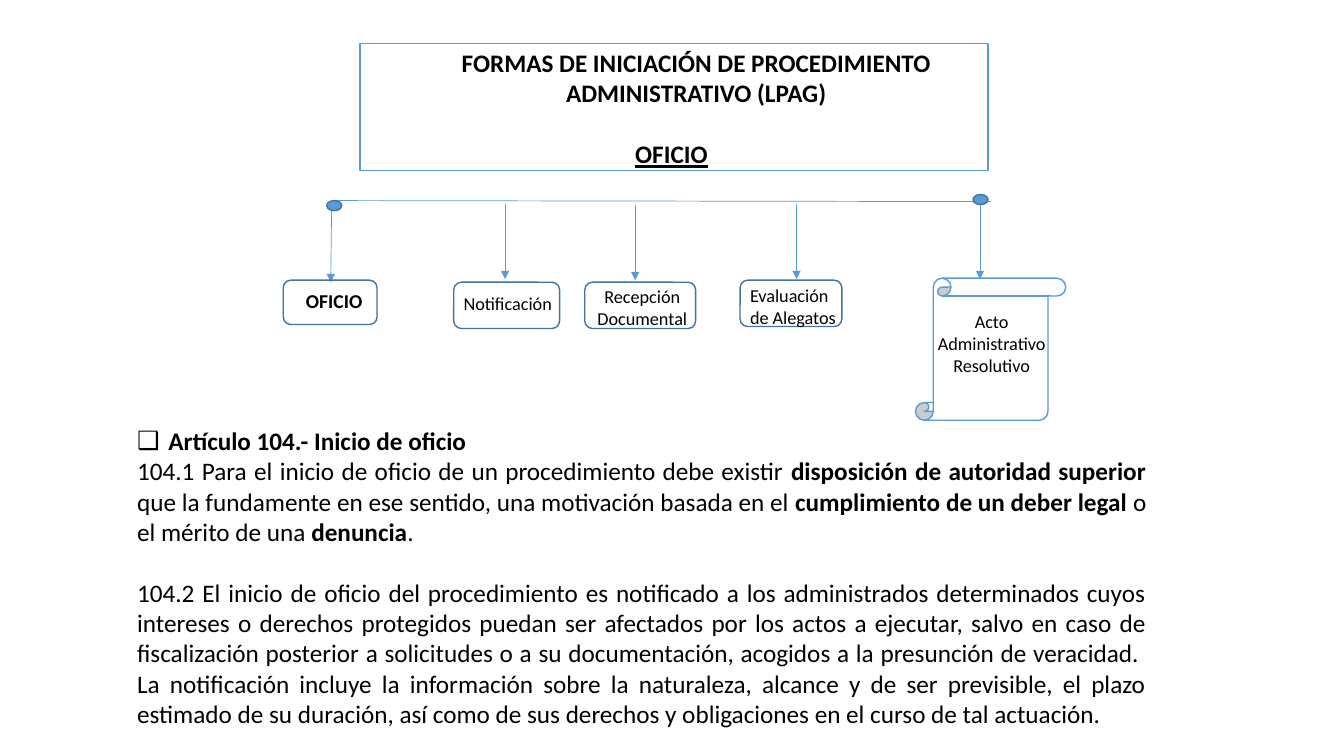
from lxml.etree import SubElement
from pptx import Presentation
from pptx.dml.color import RGBColor
from pptx.enum.shapes import MSO_CONNECTOR as Line, MSO_SHAPE as Kind
from pptx.enum.text import MSO_ANCHOR as Anchor, MSO_AUTO_SIZE as Fit, PP_ALIGN as Align
from pptx.oxml.ns import qn
from pptx.util import Inches, Pt

BLUE = RGBColor(0x5B, 0x9B, 0xD5)
NAVY = RGBColor(0x43, 0x73, 0x9E)
WHITE = RGBColor(255, 255, 255)
BLACK = RGBColor(0, 0, 0)
FONT = "Calibri"
GAP = Pt(22)

# kind, shape box, label box, label, size, bold, alignment
STEPS = [
    (Kind.ROUNDED_RECTANGLE, (2.81, 2.78, 0.93, 0.44), (2.68, 2.82, 1.27, 0.34),
     "OFICIO", 14, True, Align.CENTER),
    (Kind.ROUNDED_RECTANGLE, (4.5, 2.8, 1.05, 0.46), (4.5, 2.85, 2.54, 0.32),
     "Notificación", 13, False, Align.LEFT),
    (Kind.ROUNDED_RECTANGLE, (5.8, 2.8, 1.1, 0.46), (5.81, 2.78, 1.12, 0.76),
     "Recepción Documental", 13, False, Align.CENTER),
    (Kind.ROUNDED_RECTANGLE, (7.34, 2.78, 1.01, 0.46), (7.34, 2.77, 1.09, 0.54),
     "Evaluación de Alegatos", 13, False, Align.LEFT),
    (Kind.VERTICAL_SCROLL, (9.08, 2.76, 1.49, 1.41), (9.14, 3.03, 1.39, 0.76),
     "Acto Administrativo Resolutivo", 13, False, Align.CENTER),
]
ARROWS = [(3.29, 2.03, 3.28, 2.8), (5.01, 2.02, 5.01, 2.77), (6.3, 2.03, 6.3, 2.78),
          (7.9, 2.02, 7.9, 2.77), (9.72, 2.02, 9.72, 2.77)]
DOTS = [(3.24, 1.99, 0.15, 0.1), (9.65, 1.93, 0.15, 0.1)]

HEAD = [("Artículo 104.- Inicio de oficio", True)]
FIRST = [
    ("104.1 Para el inicio de oficio de un procedimiento debe existir ", False),
    ("disposición de autoridad superior", True),
    (" que la fundamente en ese sentido, una motivación basada en el ", False),
    ("cumplimiento de un deber legal", True),
    (" o el mérito de una ", False),
    ("denuncia", True),
    (".", False),
]
SECOND = [(
    "104.2 El inicio de oficio del procedimiento es notificado a los administrados "
    "determinados cuyos intereses o derechos protegidos puedan ser afectados por los "
    "actos a ejecutar, salvo en caso de fiscalización posterior a solicitudes o a su "
    "documentación, acogidos a la presunción de veracidad.  La notificación incluye la "
    "información sobre la naturaleza, alcance y de ser previsible, el plazo estimado de "
    "su duración, así como de sus derechos y obligaciones en el curso de tal actuación.",
    False)]


def inch(vals):
    return [Inches(v) for v in vals]


def add_run(para, text, size, bold=False, under=False):
    run = para.add_run()
    run.text = text
    font = run.font
    font.name, font.size, font.bold = FONT, Pt(size), bold
    font.underline = under
    font.color.rgb = BLACK


def indent(para, left, first=0, mark=None):
    """Set the margins of a paragraph and its bullet, if any."""
    props = para._p.get_or_add_pPr()
    props.set("marL", str(Inches(left)))
    props.set("indent", str(Inches(first)))
    if mark:
        SubElement(props, qn("a:buChar")).set("char", mark)
    else:
        SubElement(props, qn("a:buNone"))


def prepare(shape, box):
    """Move a text holder and return its frame, wrapped and top anchored."""
    shape.left, shape.top, shape.width, shape.height = inch(box)
    frame = shape.text_frame
    frame.word_wrap = True
    frame.auto_size = Fit.NONE
    frame.vertical_anchor = Anchor.TOP
    return frame


def add_shape(slide, kind, box, line, fill=None):
    shape = slide.shapes.add_shape(kind, *inch(box))
    shape.shadow.inherit = False
    if fill is None:
        shape.fill.background()
    else:
        shape.fill.solid()
        shape.fill.fore_color.rgb = fill
    shape.line.color.rgb = line
    shape.line.width = Pt(1)


def add_line(slide, ends, arrow=False):
    wire = slide.shapes.add_connector(Line.STRAIGHT, *inch(ends))
    wire.line.color.rgb = BLUE
    wire.line.width = Pt(0.5)
    if arrow:
        SubElement(wire.line._get_or_add_ln(), qn("a:tailEnd")).set("type", "triangle")
    SubElement(wire._element.spPr, qn("a:effectLst"))


def add_step(slide, kind, box, area, label, size, bold, align):
    scroll = kind == Kind.VERTICAL_SCROLL
    add_shape(slide, kind, box, BLUE if scroll else NAVY, WHITE if scroll else None)
    frame = prepare(slide.shapes.add_textbox(*inch(area)), area)
    para = frame.paragraphs[0]
    para.alignment = align
    add_run(para, label, size, bold)


def fill_title(slide):
    add_shape(slide, Kind.RECTANGLE, (3.57, 0.43, 6.23, 1.26), BLUE)
    frame = prepare(slide.shapes.title, (3.55, 0.42, 6.71, 1.62))
    head = frame.paragraphs[0]
    head.alignment = Align.CENTER
    add_run(head, "FORMAS DE INICIACIÓN DE PROCEDIMIENTO ADMINISTRATIVO (LPAG)", 18, True)
    sub = frame.add_paragraph()
    indent(sub, 2.65)
    sub.alignment = Align.LEFT
    sub.space_before = GAP
    add_run(sub, "OFICIO", 18, True, True)


def fill_body(slide):
    frame = prepare(slide.placeholders[1], (1.26, 4.17, 10.21, 3.43))
    paras = [frame.paragraphs[0], frame.add_paragraph(), frame.add_paragraph()]
    indent(paras[0], 0.31, -0.31, "❑")
    for para in paras[1:]:
        indent(para, 0)
    for para, parts, gap in zip(paras, (HEAD, FIRST, SECOND), (Pt(0), Pt(0), GAP)):
        para.alignment = Align.JUSTIFY
        para.space_before = gap
        for text, bold in parts:
            add_run(para, text, 18, bold)


def main():
    deck = Presentation()
    deck.slide_width, deck.slide_height = inch((13.33, 7.5))
    slide = deck.slides.add_slide(deck.slide_layouts[1])
    fill_title(slide)
    add_line(slide, (3.3, 1.99, 9.83, 2))
    for ends in ARROWS:
        add_line(slide, ends, True)
    for box in DOTS:
        add_shape(slide, Kind.OVAL, box, NAVY, BLUE)
    for step in STEPS:
        add_step(slide, *step)
    fill_body(slide)
    deck.save("out.pptx")


if __name__ == "__main__":
    main()
